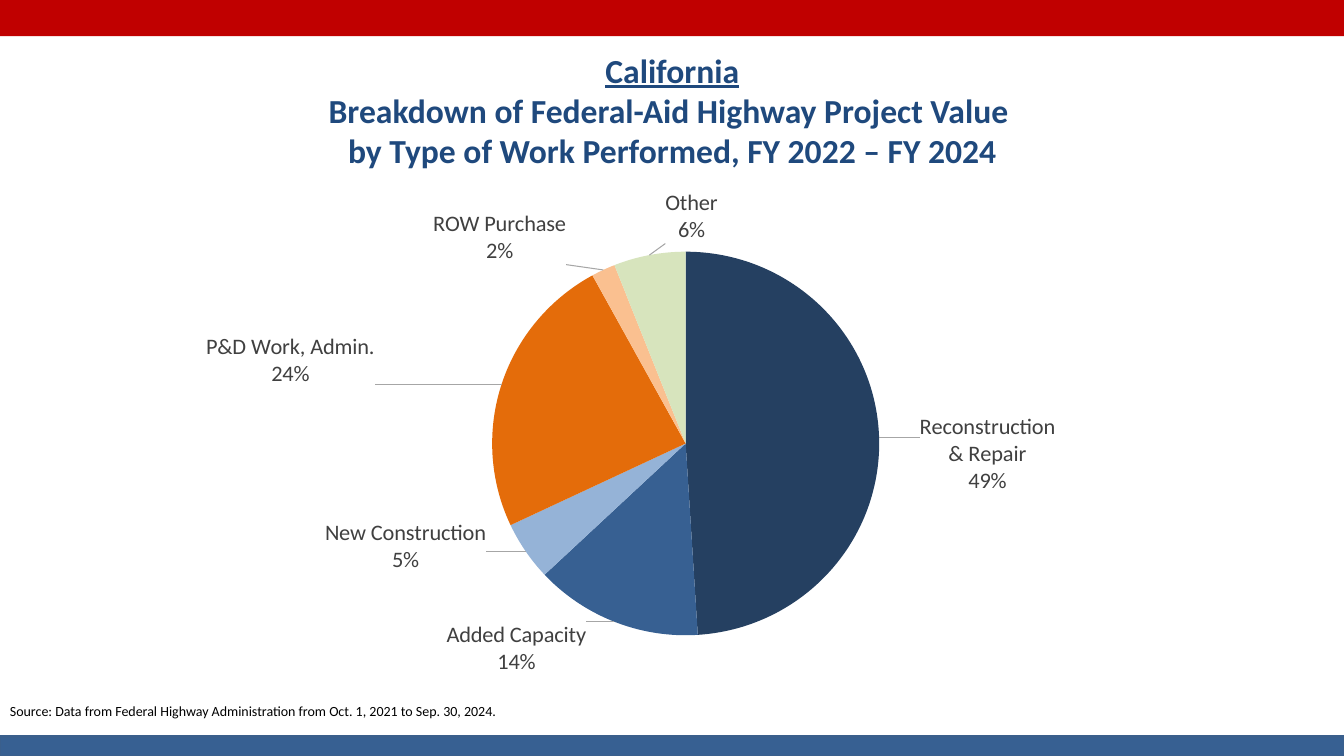
from copy import deepcopy
from dataclasses import dataclass

from lxml.etree import SubElement
from pptx import Presentation
from pptx.chart.data import CategoryChartData
from pptx.dml.color import RGBColor
from pptx.enum.chart import XL_CHART_TYPE as ChartType, XL_LABEL_POSITION as LabelPosition
from pptx.enum.shapes import MSO_SHAPE as Preset
from pptx.enum.text import MSO_ANCHOR as Anchor, PP_ALIGN as Align
from pptx.oxml import parse_xml
from pptx.oxml.ns import nsdecls, qn
from pptx.util import Cm, Pt


@dataclass(frozen=True)
class Theme:
    font: str = "Calibri"
    red: str = "C00000"
    blue: str = "376092"
    blue_edge: str = "3A5F8C"
    heading: str = "1F497D"
    label: str = "404040"
    ink: str = "000000"
    leader: str = "A6A6A6"
    heading_size: int = 24
    label_size: int = 16
    source_size: int = 10


theme = Theme()


def style(font, size, color, **extra):
    values = {"name": theme.font, "size": Pt(size), **extra}
    for attribute, value in values.items():
        setattr(font, attribute, value)
    font.color.rgb = RGBColor.from_string(color)


def manual_layout(**places):
    tags = "".join(f'<c:{tag} val="{value}"/>' for tag, value in places.items())
    return parse_xml(
        f'<c:layout {nsdecls("c")}><c:manualLayout>{tags}</c:manualLayout></c:layout>'
    )


deck = Presentation()
deck.slide_width, deck.slide_height = Cm(33.87), Cm(19.05)
slide = deck.slides.add_slide(deck.slide_layouts[5])

heading = slide.shapes.title
heading.left, heading.top, heading.width, heading.height = Cm(0.46), Cm(1.12), Cm(32.97), Cm(3.33)
heading.text_frame.vertical_anchor = Anchor.TOP
heading.text_frame.text = (
    "California\n"
    "Breakdown of Federal-Aid Highway Project Value \n"
    "by Type of Work Performed, FY 2022 – FY 2024"
)
for number, line in enumerate(heading.text_frame.paragraphs):
    line.alignment = Align.CENTER
    style(line.runs[0].font, theme.heading_size, theme.heading, bold=True, underline=number == 0)

for top, height, fill, edge in (
    (0, 0.91, theme.red, None),
    (18.56, 0.49, theme.blue, theme.blue_edge),
):
    band = slide.shapes.add_shape(Preset.RECTANGLE, 0, Cm(top), deck.slide_width, Cm(height))
    band.shadow.inherit = False
    band.fill.solid()
    band.fill.fore_color.rgb = RGBColor.from_string(fill)
    if edge:
        band.line.color.rgb = RGBColor.from_string(edge)
        band.line.width = Pt(2)
    else:
        band.line.fill.background()

source = slide.shapes.add_textbox(0, Cm(17.58), Cm(32.97), Cm(0.69))
source.text_frame.word_wrap = True
source.text_frame.text = (
    "Source: Data from Federal Highway Administration from Oct. 1, 2021 to Sep. 30, 2024."
)
style(source.text_frame.paragraphs[0].runs[0].font, theme.source_size, theme.ink)

work_types = (
    ("Reconstruction & Repair", 49, "254061", 0.04, 0.03),
    ("Added Capacity", 14, theme.blue, -0.03, -0.01),
    ("New Construction", 5, "95B3D7", -0.04, -0.06),
    ("P&D Work, Admin.", 24, "E46C0A", -0.14, 0.01),
    ("ROW Purchase", 2, "FAC090", -0.04, 0),
    ("Other", 6, "D7E4BD", 0.08, -0.01),
)
breakdown = CategoryChartData()
breakdown.categories = [work_type[0] for work_type in work_types]
breakdown.add_series("Series 1", [work_type[1] for work_type in work_types])
pie = slide.shapes.add_chart(
    ChartType.PIE, Cm(5.16), Cm(2.39), Cm(21.84), Cm(14.78), breakdown
).chart
pie.has_legend = False
pie.has_title = False
style(pie.font, theme.source_size, theme.ink)
pie.plots[0].vary_by_categories = True

plot_area = pie.plots[0]._element.getparent()
for old_layout in plot_area.findall(qn("c:layout")):
    plot_area.remove(old_layout)
plot_area.insert(0, manual_layout(
    layoutTarget="inner", xMode="edge", yMode="edge", x=0.26, y=0.27, w=0.59, h=0.66
))

shares = pie.plots[0].series[0]
labels = shares.data_labels
for attribute, value in {
    "show_percentage": True,
    "show_category_name": True,
    "show_value": False,
    "number_format": "0%",
    "number_format_is_linked": False,
    "position": LabelPosition.OUTSIDE_END,
}.items():
    setattr(labels, attribute, value)
style(labels.font, theme.label_size, theme.label)

label_list = labels._element
for leader_tag in ("c:separator", "c:showLeaderLines", "c:leaderLines"):
    for old in label_list.findall(qn(leader_tag)):
        label_list.remove(old)
SubElement(label_list, qn("c:separator")).text = "\n"
shared_format = [deepcopy(part) for part in label_list]
SubElement(label_list, qn("c:showLeaderLines")).set("val", "1")
label_list.append(parse_xml(
    f'<c:leaderLines {nsdecls("c", "a")}><c:spPr><a:ln w="9525"><a:solidFill>'
    f'<a:srgbClr val="{theme.leader}"/></a:solidFill></a:ln></c:spPr></c:leaderLines>'
))

for index, (_, _, color, shift_x, shift_y) in enumerate(work_types):
    wedge = shares.points[index].format
    wedge.fill.solid()
    wedge.fill.fore_color.rgb = RGBColor.from_string(color)
    wedge.line.fill.background()
    label = parse_xml(f'<c:dLbl {nsdecls("c")}><c:idx val="{index}"/></c:dLbl>')
    label.append(manual_layout(x=shift_x, y=shift_y))
    label.extend(deepcopy(shared_format))
    label_list.insert(index, label)

deck.save("out.pptx")
